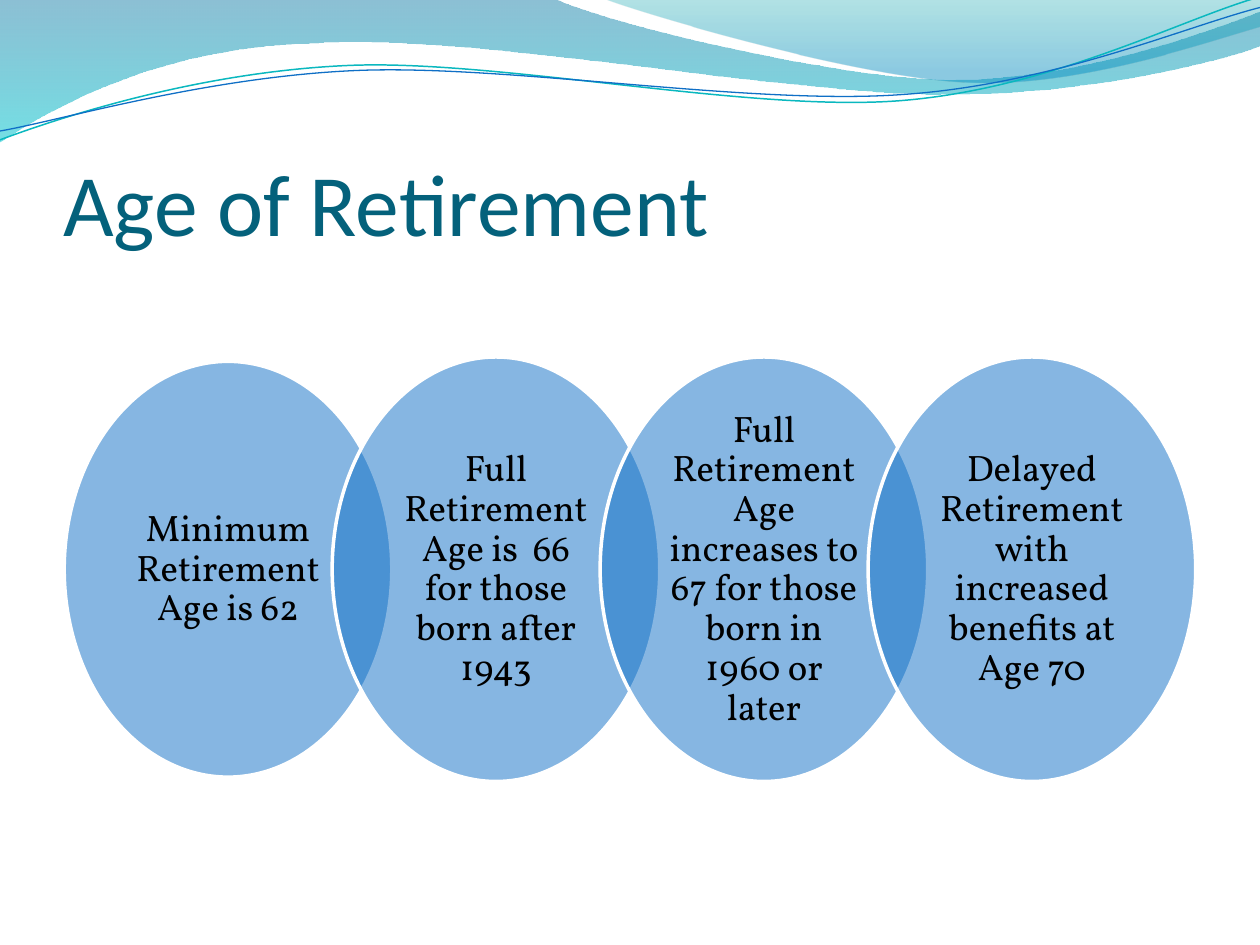
import math
from dataclasses import dataclass
from typing import Optional

import pptx
import pptx.dml.color
import pptx.enum.shapes
import pptx.enum.text
import pptx.oxml
import pptx.oxml.ns
import pptx.util

Pt = pptx.util.Pt
RGBColor = pptx.dml.color.RGBColor
qn = pptx.oxml.ns.qn
Point = tuple[float, float]

BLUE = RGBColor(0x0F, 0x6F, 0xC6)
TEAL = RGBColor(0x0A, 0xB8, 0xBF)
DEEP_BLUE = RGBColor(0x00, 0x74, 0xA1)
CYAN = RGBColor(0x00, 0xC6, 0xCF)
SEA_GREEN = RGBColor(0x00, 0xA1, 0xA9)
SKY_BLUE = RGBColor(0x00, 0x8B, 0xBF)
TITLE_TEAL = RGBColor(0x04, 0x61, 0x7B)
WHITE = RGBColor(0xFF, 0xFF, 0xFF)
BLACK = RGBColor(0, 0, 0)

UNITS_PER_POINT = 100
LINE_TILT = -2.7
LINE_PIVOT = (359.6, 42)
AGE_LEFT, AGE_MIDDLE, AGE_PITCH, AGE_WIDTH = 36.7, 325.3, 153.13, 187.2
INSCRIBED = math.sqrt(0.5)


@dataclass(frozen=True)
class Stop:
    position: float
    color: RGBColor
    opacity: int


@dataclass(frozen=True)
class Wave:
    start: Point
    segments: list[tuple[Point, ...]]
    stops: tuple[Stop, ...] = ()
    line_color: Optional[RGBColor] = None
    line_width: float = 0


@dataclass(frozen=True)
class RetirementAge:
    text: str
    height: float = 242.6


WAVES = [
    Wave((0, 0), [
        ((316.8, -0.7),),
        ((342.7, 12.2), (478.1, 45.4), (545.8, 45.4)),
        ((614.2, 45.4), (689.8, 18.7), (720, 6.5)),
        ((720.7, 25.9),),
        ((707.8, 31.7), (626.4, 54.7), (537.1, 54)),
        ((447.8, 54), (275, 20.2), (185, 24.5)),
        ((92.9, 25.9), (33.1, 59.8), (-0.7, 81.4)),
    ], (Stop(0, DEEP_BLUE, 45), Stop(1, CYAN, 55))),
    Wave((344.9, -0.7), [
        ((366.5, 7.9), (491, 44.6), (553.7, 46.8)),
        ((616.3, 49.7), (691.9, 23), (720, 15.1)),
        ((720, 0),),
    ], (Stop(0, SEA_GREEN, 30), Stop(0.8, SKY_BLUE, 45))),
    Wave((0, 79.9), [
        ((34.6, 67), (113.8, 41), (199.4, 37.4)),
        ((284.4, 33.8), (427, 64.1), (513.4, 57.6)),
        ((599.8, 51.1), (675.4, 10.8), (718.6, -1.4)),
    ], line_color=TEAL, line_width=0.85),
    Wave((0, 74.9), [
        ((33.8, 69.1), (118.1, 43.9), (203.8, 40.3)),
        ((290.2, 36.7), (429.8, 60.5), (516.2, 54)),
        ((601.9, 48.2), (677.5, 15.1), (720, 4.3)),
    ], line_color=BLUE, line_width=0.75),
]

RETIREMENT_AGES = [
    RetirementAge("Minimum Retirement Age is 62", 237.6),
    RetirementAge("Full Retirement Age is  66 for those born after 1943"),
    RetirementAge("Full Retirement Age increases to 67 for those born in 1960 or later"),
    RetirementAge("Delayed Retirement with increased benefits at Age 70"),
]


def set_opacity(shape, opacities: list[int]) -> None:
    colors = list(shape._element.spPr.iter(qn("a:srgbClr")))
    for color, opacity in zip(colors, opacities):
        color.append(pptx.oxml.parse_xml(
            f'<a:alpha {pptx.oxml.ns.nsdecls("a")} val="{opacity * 1000}"/>'))


def level(point: Point) -> Point:
    angle = math.radians(-LINE_TILT)
    dx, dy = point[0] - LINE_PIVOT[0], point[1] - LINE_PIVOT[1]
    return (LINE_PIVOT[0] + dx * math.cos(angle) - dy * math.sin(angle),
            LINE_PIVOT[1] + dx * math.sin(angle) + dy * math.cos(angle))


def bend_segments(shape, segments: list[tuple[Point, ...]]) -> None:
    steps = iter(list(shape._element.spPr.iter(qn("a:lnTo"))))
    for segment in segments:
        members = [next(steps) for _ in segment]
        if len(members) == 3:
            curve = pptx.oxml.parse_xml(
                f'<a:cubicBezTo {pptx.oxml.ns.nsdecls("a")}/>')
            members[0].addprevious(curve)
            for member in members:
                curve.append(member[0])
                member.getparent().remove(member)


def draw_wave(slide, wave: Wave) -> None:
    points = [wave.start, *(point for segment in wave.segments for point in segment)]
    if not wave.stops:
        points = [level(point) for point in points]
    units = [(x * UNITS_PER_POINT, y * UNITS_PER_POINT) for x, y in points]
    builder = slide.shapes.build_freeform(*units[0], scale=Pt(1) / UNITS_PER_POINT)
    builder.add_line_segments(units[1:], close=bool(wave.stops))
    shape = builder.convert_to_shape()
    bend_segments(shape, wave.segments)
    shape.shadow.inherit = False
    if wave.stops:
        shape.line.fill.background()
        shape.fill.gradient()
        shape.fill.gradient_angle = 270
        for gradient_stop, stop in zip(shape.fill.gradient_stops, wave.stops):
            gradient_stop.position = stop.position
            gradient_stop.color.rgb = stop.color
        set_opacity(shape, [stop.opacity for stop in wave.stops])
    else:
        shape.rotation = LINE_TILT
        shape.fill.background()
        shape.line.color.rgb = wave.line_color
        shape.line.width = Pt(wave.line_width)


def add_run(paragraph, text: str, font_name: str, size: float, color: RGBColor) -> None:
    run = paragraph.add_run()
    run.text = text
    run.font.name = font_name
    run.font.size = Pt(size)
    run.font.color.rgb = color


def set_margins(frame, horizontal: float, top: float, bottom: float) -> None:
    frame.margin_left = frame.margin_right = Pt(horizontal)
    frame.margin_top, frame.margin_bottom = Pt(top), Pt(bottom)


def draw_title(slide, text: str) -> None:
    title = slide.shapes.title
    title.left, title.top, title.width, title.height = Pt(36), Pt(55.4), Pt(648), Pt(90)
    frame = title.text_frame
    frame.auto_size = pptx.enum.text.MSO_AUTO_SIZE.NONE
    frame.vertical_anchor = pptx.enum.text.MSO_ANCHOR.BOTTOM
    set_margins(frame, 0, 3.6, 0)
    paragraph = frame.paragraphs[0]
    paragraph.alignment = pptx.enum.text.PP_ALIGN.LEFT
    add_run(paragraph, text, "Calibri", 50, TITLE_TEAL)


def draw_age(slide, index: int, age: RetirementAge) -> None:
    center = AGE_LEFT + index * AGE_PITCH + AGE_WIDTH / 2
    ellipse = slide.shapes.add_shape(
        pptx.enum.shapes.MSO_SHAPE.OVAL,
        Pt(center - AGE_WIDTH / 2), Pt(AGE_MIDDLE - age.height / 2),
        Pt(AGE_WIDTH), Pt(age.height))
    ellipse.shadow.inherit = False
    ellipse.fill.solid()
    ellipse.fill.fore_color.rgb = BLUE
    set_opacity(ellipse, [50])
    ellipse.line.color.rgb = WHITE
    ellipse.line.width = Pt(2)
    width, height = AGE_WIDTH * INSCRIBED, age.height * INSCRIBED
    label = slide.shapes.add_textbox(
        Pt(center - width / 2), Pt(AGE_MIDDLE - height / 2), Pt(width), Pt(height))
    frame = label.text_frame
    frame.word_wrap = True
    frame.vertical_anchor = pptx.enum.text.MSO_ANCHOR.MIDDLE
    set_margins(frame, 9.4, 2.2, 2.2)
    paragraph = frame.paragraphs[0]
    paragraph.alignment = pptx.enum.text.PP_ALIGN.CENTER
    paragraph.line_spacing = 0.9
    add_run(paragraph, age.text, "Vollkorn", 21, BLACK)


def main() -> None:
    presentation = pptx.Presentation()
    presentation.slide_width, presentation.slide_height = Pt(720), Pt(540)
    slide = presentation.slides.add_slide(presentation.slide_layouts[5])
    for wave in WAVES:
        draw_wave(slide, wave)
    draw_title(slide, "Age of Retirement")
    for index, age in enumerate(RETIREMENT_AGES):
        draw_age(slide, index, age)
    presentation.save("out.pptx")


if __name__ == "__main__":
    main()
